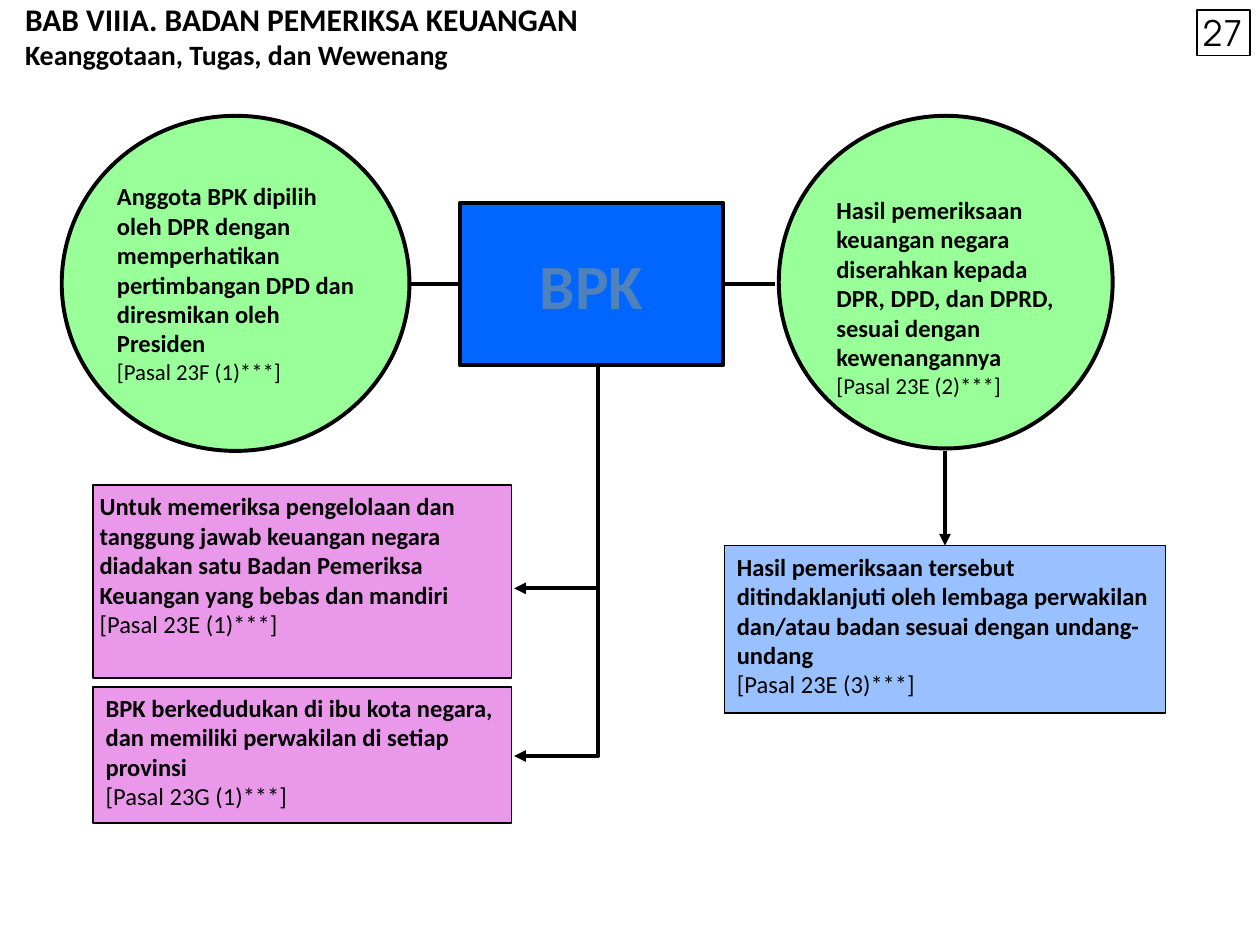
import pptx
import pptx.util
import pptx.dml.color
import pptx.enum.shapes
import pptx.enum.text
import pptx.oxml.ns
from lxml import etree

Pt = pptx.util.Pt
RGBColor = pptx.dml.color.RGBColor
MSO_SHAPE = pptx.enum.shapes.MSO_SHAPE
PP_ALIGN = pptx.enum.text.PP_ALIGN
MSO_ANCHOR = pptx.enum.text.MSO_ANCHOR
qn = pptx.oxml.ns.qn

BLACK = RGBColor(0x00, 0x00, 0x00)
BLUE = RGBColor(0x00, 0x66, 0xFF)
PURPLE = RGBColor(0xCC, 0x00, 0xCC)
GREEN = RGBColor(0x99, 0xFF, 0x99)
STEEL = RGBColor(0x4F, 0x81, 0xBD)
FONT, NUMBER_FONT = "Calibri", "TeX Gyre Adventor"
THIN, THICK = 1, 2.25
INSETS = (7.2, 3.6, 7.2, 3.6)

# Paragraphs: (text, size, bold)
TITLE = [("BAB VIIIA. BADAN PEMERIKSA KEUANGAN", 18, True),
         ("Keanggotaan, Tugas, dan Wewenang", 16, True)]

# Boxes: (left, top, width, height), fill, insets, statement, article
BOXES = {
    "task": ((53.3, 277.2, 239, 110.2), PURPLE, (3.6,) * 4,
             "Untuk memeriksa pengelolaan dan tanggung jawab keuangan negara "
             "diadakan satu Badan Pemeriksa Keuangan yang bebas dan mandiri",
             "[Pasal 23E (1)***]"),
    "seat": ((53.3, 392.4, 239, 77.8), PURPLE, INSETS,
             "BPK berkedudukan di ibu kota negara, dan memiliki perwakilan "
             "di setiap provinsi",
             "[Pasal 23G (1)***]"),
    "follow_up": ((414, 311.8, 252, 95.8), BLUE, INSETS,
                  "Hasil pemeriksaan tersebut ditindaklanjuti oleh lembaga "
                  "perwakilan dan/atau badan sesuai dengan undang-undang",
                  "[Pasal 23E (3)***]"),
}
CIRCLES = [
    ((445, 66.2, 190.8, 190.1), (5, 17, 0, 0),
     "Hasil pemeriksaan keuangan negara diserahkan kepada DPR, DPD, dan DPRD, "
     "sesuai dengan kewenangannya",
     "[Pasal 23E (2)***]"),
    ((35.3, 66.2, 198.7, 191.5), (2.5, 0, 0, 0),
     "Anggota BPK dipilih oleh DPR dengan memperhatikan pertimbangan DPD dan "
     "diresmikan oleh Presiden",
     "[Pasal 23F (1)***]"),
]
BPK_AREA = (262.8, 115.9, 150.5, 92.9)
TRUNK_X, ARROW_X = 342, 293.8
BRANCHES = [(207.4, 336.2), (336.2, 432)]   # top and bottom of each elbow


def write(sp, paragraphs, insets=INSETS, color=BLACK, font=FONT,
          anchor=MSO_ANCHOR.TOP, align=PP_ALIGN.LEFT):
    tf = sp.text_frame
    tf.word_wrap = True
    tf.vertical_anchor = anchor
    tf.margin_left, tf.margin_top, tf.margin_right, tf.margin_bottom = map(Pt, insets)
    tf.text = "\n".join(text for text, _, _ in paragraphs)
    for p, (_, size, bold) in zip(tf.paragraphs, paragraphs):
        p.alignment = align
        f = p.runs[0].font
        f.name, f.size, f.bold = font, Pt(size), bold
        f.color.rgb = color


def add_shape(s, kind, area, fill=None, line=THIN, opacity=None):
    sp = s.shapes.add_shape(kind, *map(Pt, area))
    sp.shadow.inherit = False
    if fill is None:
        sp.fill.background()
    else:
        sp.fill.solid()
        sp.fill.fore_color.rgb = fill
    if opacity:
        clr = sp._element.spPr.find(qn("a:solidFill"))[0]
        etree.SubElement(clr, qn("a:alpha"), val=str(opacity * 1000))
    sp.line.color.rgb = BLACK
    sp.line.width = Pt(line)
    return sp


def style_line(sp, arrow):
    sp.line.color.rgb = BLACK
    sp.line.width = Pt(THICK)
    if arrow:
        etree.SubElement(sp.line._get_or_add_ln(), qn("a:tailEnd"), type="triangle")


def add_link(s, x1, y1, x2, y2, arrow=False):
    c = s.shapes.add_connector(pptx.enum.shapes.MSO_CONNECTOR.STRAIGHT,
                               Pt(x1), Pt(y1), Pt(x2), Pt(y2))
    style_line(c, arrow)
    etree.SubElement(c._element.spPr, qn("a:effectLst"))
    return c


def add_elbow(s, top, bottom):
    fb = s.shapes.build_freeform(Pt(TRUNK_X), Pt(top))
    fb.add_line_segments([(Pt(TRUNK_X), Pt(bottom)), (Pt(ARROW_X), Pt(bottom))],
                         close=False)
    sp = fb.convert_to_shape()
    sp.shadow.inherit = False
    sp.fill.background()
    style_line(sp, True)


def main():
    prs = pptx.Presentation()
    prs.slide_width, prs.slide_height = Pt(720), Pt(540)
    s = prs.slides.add_slide(prs.slide_layouts[6])

    write(s.shapes.add_textbox(Pt(7.2), Pt(-3.6), Pt(442.8), Pt(42.5)), TITLE)

    boxes = {}
    for name, (area, fill, insets, statement, article) in BOXES.items():
        sp = boxes[name] = add_shape(s, MSO_SHAPE.RECTANGLE, area, fill, opacity=40)
        write(sp, [(statement, 14, True), (article, 14, False)], insets)

    number = add_shape(s, MSO_SHAPE.RECTANGLE, (684, 5.8, 30.2, 25.9))
    write(number, [("27", 20, False)], (0,) * 4, font=NUMBER_FONT,
          anchor=MSO_ANCHOR.MIDDLE, align=PP_ALIGN.CENTER)

    for top, bottom in BRANCHES:
        add_elbow(s, top, bottom)

    bpk = add_shape(s, MSO_SHAPE.RECTANGLE, BPK_AREA, BLUE, THICK)
    write(bpk, [("BPK", 36, True)], color=STEEL,
          anchor=MSO_ANCHOR.MIDDLE, align=PP_ALIGN.CENTER)

    left, top, width, height = BPK_AREA
    mid_y = top + height / 2
    add_link(s, 233.3, mid_y, left, mid_y).end_connect(bpk, 1)
    add_link(s, left + width, mid_y, 442.8, mid_y).begin_connect(bpk, 3)
    add_link(s, 540, 257.8, 540, 311.8, arrow=True).end_connect(boxes["follow_up"], 0)

    for area, insets, statement, article in CIRCLES:
        sp = add_shape(s, MSO_SHAPE.OVAL, area, GREEN, THICK)
        write(sp, [(statement, 14, True), (article, 13, False)], insets,
              anchor=MSO_ANCHOR.MIDDLE)

    prs.save("out.pptx")


if __name__ == "__main__":
    main()
